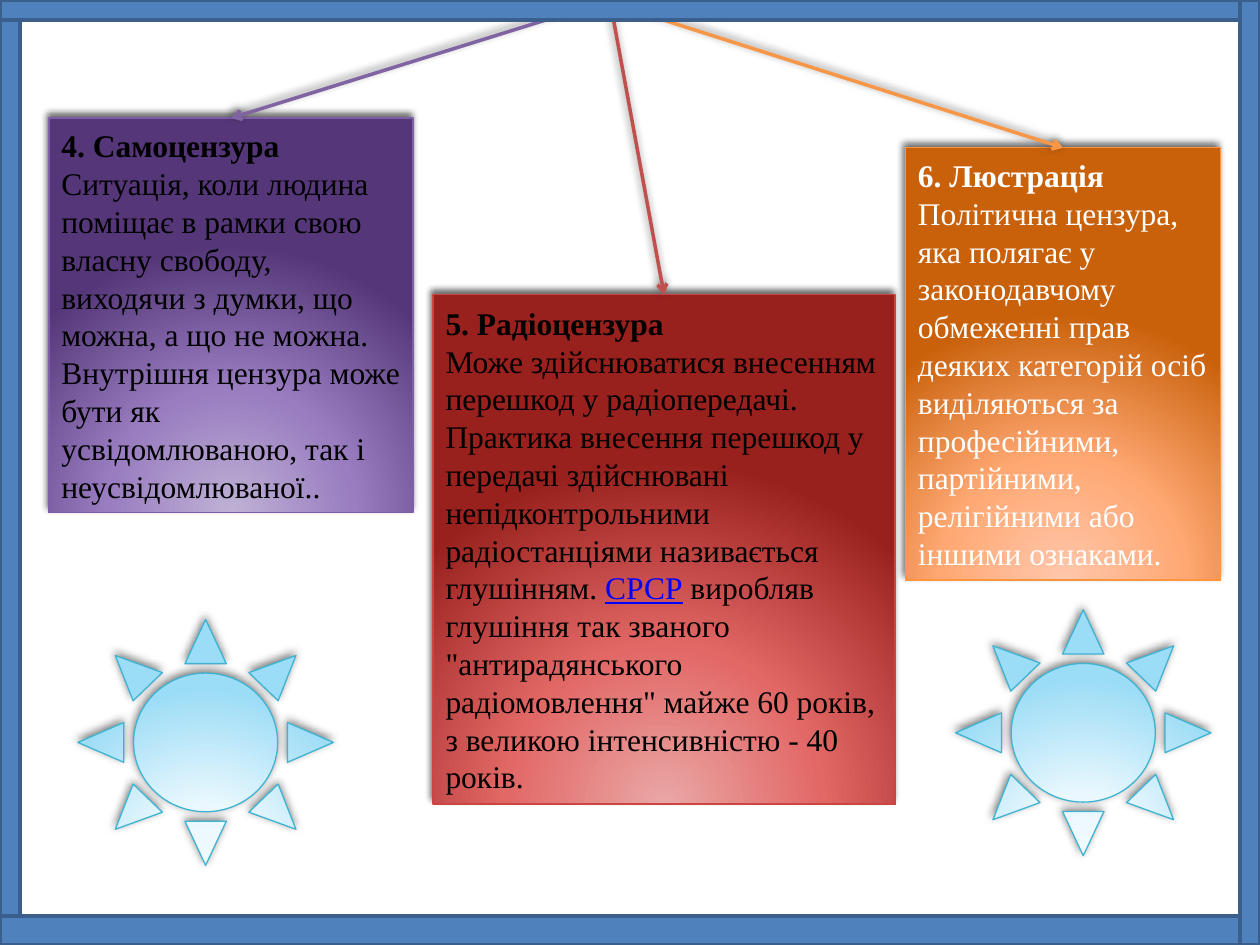
from lxml.etree import SubElement
from pptx import Presentation
from pptx.dml.color import RGBColor
from pptx.enum.shapes import MSO_CONNECTOR, MSO_SHAPE
from pptx.enum.text import MSO_ANCHOR, MSO_AUTO_SIZE, PP_ALIGN
from pptx.oxml.ns import qn
from pptx.util import Pt

# Content: each card has a heading and body runs of (text, is_link)
CARDS = [
    dict(heading="4. Самоцензура",
         body=[("Ситуація, коли людина поміщає в рамки свою власну свободу, "
                "виходячи з думки, що можна, а що не можна. Внутрішня цензура "
                "може бути як усвідомлюваною, так і неусвідомлюваної..", False)],
         place=(28, 67.5, 208, 225.5), ink="000000", edge="7F5EA8",
         stops=[(0, "BFB1D5"), (46, "997DC0"), (100, "553779")],
         arrow_x=348.5, arrow_color="8064A2"),
    dict(heading="5. Радіоцензура",
         body=[("Може здійснюватися внесенням перешкод у радіопередачі. Практика "
                "внесення перешкод у передачі здійснювані непідконтрольними "
                "радіостанціями називається глушінням. ", False),
               ("СРСР", True),
               (" виробляв глушіння так званого \"антирадянського радіомовлення\" "
                "майже 60 років, з великою інтенсивністю - 40 років.", False)],
         place=(247.5, 168.5, 264, 291), ink="000000", edge="CC4542",
         stops=[(0, "E9A7A6"), (46, "E26866"), (100, "98201D")],
         arrow_x=348.5, arrow_color="C0504D"),
    dict(heading="6. Люстрація",
         body=[("Політична цензура, яка полягає у законодавчому обмеженні прав "
                "деяких категорій осіб виділяються за професійними, партійними, "
                "релігійними або іншими ознаками.", False)],
         place=(517.5, 84.5, 180, 247), ink="FFFFFF", edge="FF953E",
         stops=[(0, "FFC7AC"), (46, "FFA873"), (100, "C9610B")],
         arrow_x=343.5, arrow_color="F79646"),
]
WIDTH, HEIGHT = 720, 540
SIDE, BOTTOM = 11.5, 16.5
FRAME = [(0, 0, SIDE, HEIGHT), (0, HEIGHT - BOTTOM, WIDTH, BOTTOM),
         (0, 0, WIDTH, SIDE), (WIDTH - SIDE, 0, SIDE, HEIGHT)]
SUNS = [(44.5, 354, 146, 140.5), (546, 348.5, 146, 140.5)]
SUN_STOPS = [(0, "EFFAFF"), (34, "EAF8FE"), (100, "9BDCF6")]
CARD_SHADOW = dict(alpha=60, blur=4, distance=3)
THIN_SHADOW = dict(alpha=50, blur=5, distance=2)


def color(value):
    return RGBColor.from_string(value)


def add(parent, tag, **attributes):
    return SubElement(parent, qn(tag), {k: str(v) for k, v in attributes.items()})


def set_line(part, edge, width):
    part.line.color.rgb = color(edge)
    part.line.width = Pt(width)


def add_shadow(effects, alpha, blur, distance):
    outer = add(effects, "a:outerShdw", blurRad=Pt(blur), dist=Pt(distance),
                dir=245 * 60000, algn="ctr", rotWithShape=0)
    add(add(outer, "a:srgbClr", val="000000"), "a:alpha", val=alpha * 1000)


def fill_glow(shape, stops):
    """Circular gradient centred below the shape."""
    shape.fill.gradient()
    glow = shape.element.spPr.find(qn("a:gradFill"))
    for child in list(glow):
        glow.remove(child)
    stop_list = add(glow, "a:gsLst")
    for position, value in stops:
        add(add(stop_list, "a:gs", pos=position * 1000), "a:srgbClr", val=value)
    add(add(glow, "a:path", path="circle"), "a:fillToRect",
        l=50000, t=155000, r=50000, b=-55000)


def add_shape(kind, place, edge, width):
    shape = slide.shapes.add_shape(kind, *map(Pt, place))
    shape.shadow.inherit = False
    set_line(shape, edge, width)
    return shape


def add_glowing(kind, place, edge, stops, shadow):
    shape = add_shape(kind, place, edge, 0.75)
    fill_glow(shape, stops)
    add_shadow(shape.element.spPr.find(qn("a:effectLst")), **shadow)
    return shape


def add_run(paragraph, text, ink, **formats):
    run = paragraph.add_run()
    run.text = text
    run.font.color.rgb = color(ink)
    for key, value in dict(name="Times New Roman", size=Pt(18), **formats).items():
        setattr(run.font, key, value)


def add_card(card):
    box = add_glowing(MSO_SHAPE.RECTANGLE, card["place"], card["edge"],
                      card["stops"], CARD_SHADOW)
    frame = box.text_frame
    for key, value in dict(word_wrap=True, vertical_anchor=MSO_ANCHOR.MIDDLE,
                           auto_size=MSO_AUTO_SIZE.SHAPE_TO_FIT_TEXT).items():
        setattr(frame, key, value)
    heading, body = frame.paragraphs[0], frame.add_paragraph()
    heading.alignment = body.alignment = PP_ALIGN.LEFT
    add_run(heading, card["heading"], card["ink"], bold=True)
    for text, is_link in card["body"]:
        add_run(body, text, "0000FF" if is_link else card["ink"],
                bold=False, underline=is_link)


def add_arrow(card):
    """Arrow from the top edge of the slide to the top centre of the card."""
    left, top, width, _ = card["place"]
    ends = (card["arrow_x"], 0, left + width / 2, top)
    arrow = slide.shapes.add_connector(MSO_CONNECTOR.STRAIGHT, *map(Pt, ends))
    set_line(arrow, card["arrow_color"], 2)
    properties = arrow.element.spPr
    add(properties.find(qn("a:ln")), "a:tailEnd", type="arrow")
    add_shadow(add(properties, "a:effectLst"), **THIN_SHADOW)


presentation = Presentation()
presentation.slide_width, presentation.slide_height = Pt(WIDTH), Pt(HEIGHT)
slide = presentation.slides.add_slide(presentation.slide_layouts[6])

# Cards and the arrows that lead to them
for card in CARDS:
    add_card(card)
for card in CARDS:
    add_arrow(card)

# Frame around the slide
for place in FRAME:
    bar = add_shape(MSO_SHAPE.RECTANGLE, place, "3A5F8C", 2)
    bar.fill.solid()
    bar.fill.fore_color.rgb = color("4F81BD")

# Suns
for place in SUNS:
    sun = add_glowing(MSO_SHAPE.SUN, place, "3FB3D2", SUN_STOPS, THIN_SHADOW)
    sun.adjustments[0] = 0.218

presentation.save("out.pptx")
